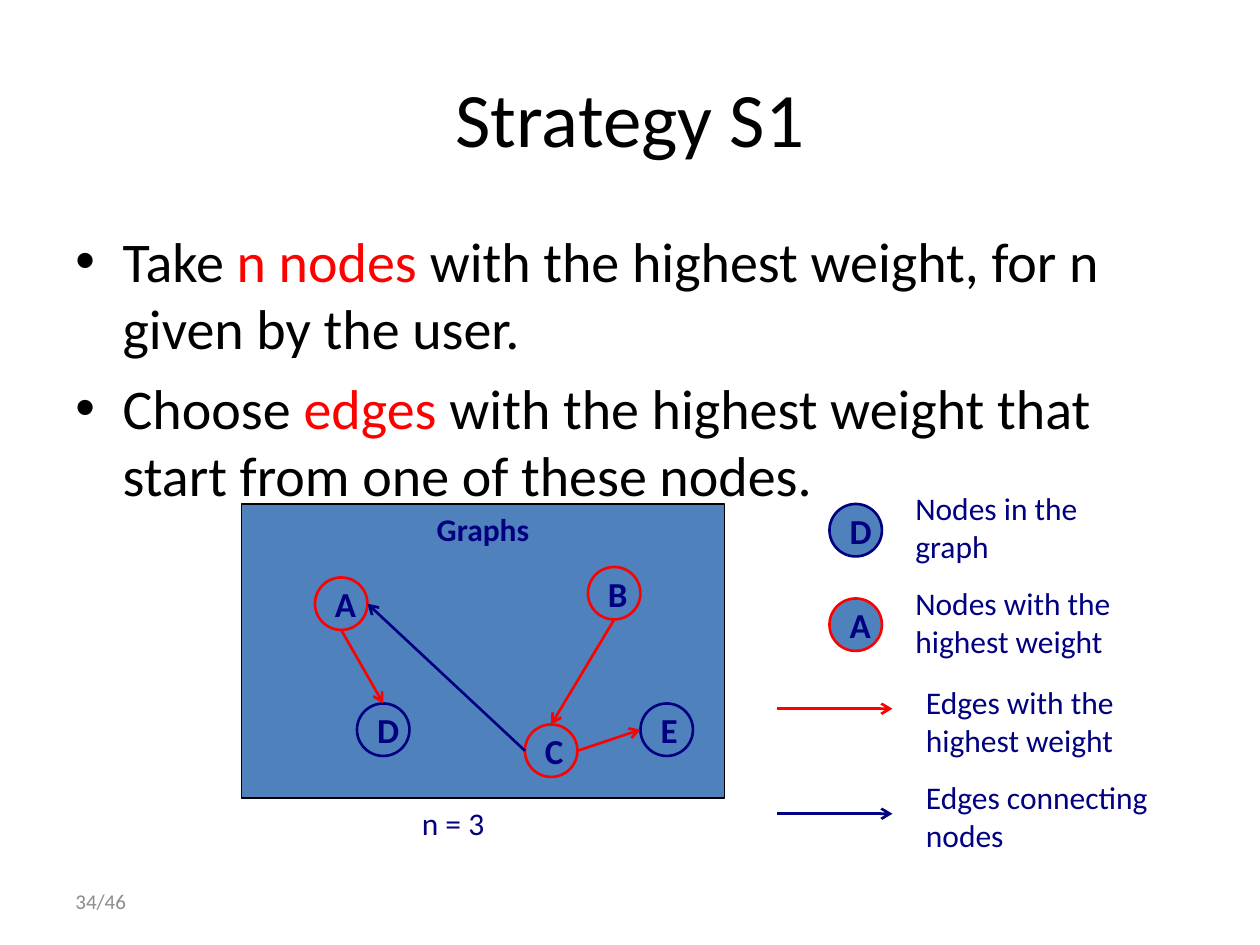
import pptx
import pptx.util
import pptx.dml.color
import pptx.enum.shapes
import pptx.enum.text
import lxml.etree
from dataclasses import dataclass
from pptx.oxml.ns import qn

Pt = pptx.util.Pt
RGB = pptx.dml.color.RGBColor.from_string
Shape = pptx.enum.shapes.MSO_SHAPE
Align = pptx.enum.text.PP_ALIGN
Anchor = pptx.enum.text.MSO_ANCHOR


@dataclass(frozen=True)
class Theme:
    font: str = "Calibri"
    black: str = "000000"
    red: str = "FF0000"
    navy: str = "000080"
    blue: str = "4F81BD"
    gray: str = "8C8C8C"
    title: int = 44
    body: int = 32
    node: int = 20
    label: int = 18
    foot: int = 12
    edge: float = 1.5


T = Theme()
NODE = 30


def write(frame, paras, size=T.label, color=T.navy, bold=False, align=Align.LEFT,
          anchor=Anchor.TOP, wrap=True, bullet=False, before=0):
    """Fill a text frame; each paragraph is a list of strings or (string, colour) pairs."""
    frame.word_wrap = wrap
    frame.vertical_anchor = anchor
    for i, parts in enumerate(paras):
        para = frame.paragraphs[0] if i == 0 else frame.add_paragraph()
        para.alignment = align
        para.space_before = Pt(before)
        if bullet:
            props = para._p.get_or_add_pPr()
            props.set("marL", str(Pt(27)))
            props.set("indent", str(-Pt(27)))
            font = lxml.etree.SubElement(props, qn("a:buFont"))
            font.set("typeface", "Arial")
            lxml.etree.SubElement(props, qn("a:buChar")).set("char", "•")
        for part in parts:
            text, tint = (part, color) if isinstance(part, str) else part
            run = para.add_run()
            run.text = text
            run.font.name = T.font
            run.font.size = Pt(size)
            run.font.bold = bold
            run.font.color.rgb = RGB(tint)


def label(slide, box, paras, **style):
    area = slide.shapes.add_textbox(*map(Pt, box))
    write(area.text_frame, paras, **style)


def block(slide, kind, box, text, line, width, **style):
    shape = slide.shapes.add_shape(kind, *map(Pt, box))
    shape.shadow.inherit = False
    shape.fill.solid()
    shape.fill.fore_color.rgb = RGB(T.blue)
    shape.line.color.rgb = RGB(line)
    shape.line.width = Pt(width)
    write(shape.text_frame, [[text]], bold=True, align=Align.CENTER, **style)


def node(slide, x, y, name, color):
    block(slide, Shape.OVAL, (x, y, NODE, NODE), name, color, T.edge,
          size=T.node, anchor=Anchor.MIDDLE)


def arrow(slide, start, end, color):
    line = slide.shapes.add_connector(pptx.enum.shapes.MSO_CONNECTOR.STRAIGHT,
                                      *map(Pt, (*start, *end)))
    line.line.color.rgb = RGB(color)
    line.line.width = Pt(T.edge)
    tail = lxml.etree.SubElement(line.line._get_or_add_ln(), qn("a:tailEnd"))
    tail.set("type", "arrow")
    lxml.etree.SubElement(line._element.spPr, qn("a:effectLst"))


def head(slide, box, text):
    title = slide.shapes.title
    title.left, title.top, title.width, title.height = map(Pt, box)
    write(title.text_frame, [[text]], size=T.title, color=T.black,
          align=Align.CENTER, anchor=Anchor.MIDDLE)


def graph(slide, box):
    left, top, wide, high = box
    block(slide, Shape.RECTANGLE, box, "Graphs", T.black, 0.75)
    nodes = {"A": (42, 42, T.red), "B": (198, 36, T.red), "C": (162, 126, T.red),
             "D": (66, 114, T.navy), "E": (228, 114, T.navy)}
    for name, (x, y, color) in nodes.items():
        node(slide, left + x, top + y, name, color)

    sides = {"top": (0.5, 0), "left": (0, 0.5), "bottom": (0.5, 1), "right": (1, 0.5)}

    def port(name, side):
        x, y, _ = nodes[name]
        dx, dy = sides[side]
        return left + x + dx * NODE, top + y + dy * NODE

    edges = [("A", "bottom", "D", "top", T.red), ("C", "left", "A", "right", T.navy),
             ("C", "right", "E", "left", T.red), ("B", "bottom", "C", "top", T.red)]
    for first, out, last, into, color in edges:
        arrow(slide, port(first, out), port(last, into), color)
    label(slide, (left + 96, top + high, 69, 36), [["n = 3"]], wrap=False)


def legend(slide, box):
    left, top, wide, high = box
    nodes = [("D", T.navy, "Nodes in the graph"),
             ("A", T.red, "Nodes with the highest weight")]
    for i, (name, color, text) in enumerate(nodes):
        y = top + 54 * i
        node(slide, left + 30, y + 12, name, color)
        label(slide, (left + 72, y, 144, 51), [[text]])
    edges = [(T.red, 129, "Edges with the highest weight"),
             (T.navy, 189, "Edges connecting nodes")]
    for i, (color, y, text) in enumerate(edges):
        arrow(slide, (left, top + y), (left + 66, top + y), color)
        label(slide, (left + 78, top + 111 + 54 * i, wide - 78, 51), [[text]])


def main():
    deck = pptx.Presentation()
    deck.slide_width, deck.slide_height = Pt(720), Pt(540)
    slide = deck.slides.add_slide(deck.slide_layouts.get_by_name("Title Only"))
    head(slide, (36, 21.6, 648, 90), "Strategy S1")
    label(slide, (36, 126, 648, 356.4), [
        ["Take ", ("n nodes ", T.red), "with the highest weight, for n given by the user."],
        ["Choose ", ("edges", T.red),
         " with the highest weight that start from one of these nodes."],
    ], size=T.body, color=T.black, bullet=True, before=7)
    graph(slide, (138, 288, 276, 168))
    legend(slide, (444, 276, 234, 216))
    label(slide, (36, 500.5, 168, 28.75), [["34/46"]], size=T.foot, color=T.gray,
          anchor=Anchor.MIDDLE)
    deck.save("out.pptx")


if __name__ == "__main__":
    main()
